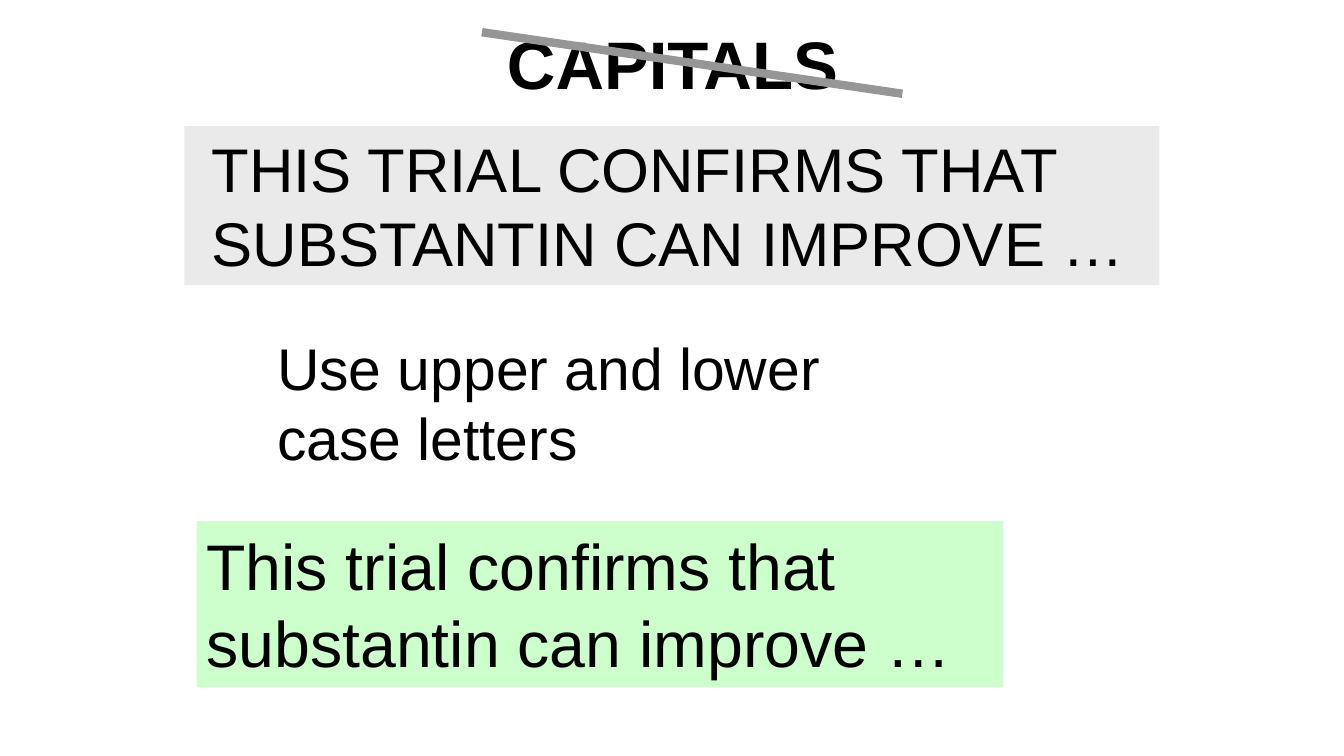
from lxml import etree
from pptx import Presentation
from pptx import util as u
from pptx.dml.color import RGBColor
from pptx.enum import shapes, text
from pptx.oxml.ns import qn

BLACK = RGBColor(0x00, 0x00, 0x00)
GREY = RGBColor(0xEA, 0xEA, 0xEA)
GREEN = RGBColor(0xCC, 0xFF, 0xCC)
STRIKE = RGBColor(0x96, 0x96, 0x96)

BLOCKS = [
    dict(lines=["THIS TRIAL CONFIRMS THAT", "SUBSTANTIN CAN IMPROVE …"],
         at=(1.83, 1.25, 9.67, 1.58), size=44, inset=0.27, fill=GREY),
    dict(lines=["Use upper and lower", "case letters"],
         at=(2.65, 3.24, 7.48, 1.51), size=42, inset=0.1, fill=None),
    dict(lines=["This trial confirms that", "substantin can improve …"],
         at=(1.95, 5.17, 8, 1.65), size=46, inset=0.1, fill=GREEN),
    dict(lines=["CAPITALS"],
         at=(4.93, 0.17, 6.48, 0.91), size=48, inset=0.1, fill=None, bold=True),
]
STRIKE_ENDS = (4.78, 0.32, 8.95, 0.93)


def set_all(obj, values):
    for name, value in values.items():
        setattr(obj, name, value)


def add_block(s, block):
    box = [u.Inches(v) for v in block["at"]]
    if block["fill"] is None:
        sp = s.shapes.add_textbox(*box)
    else:
        sp = s.shapes.add_shape(shapes.MSO_SHAPE.RECTANGLE, *box)
        sp.shadow.inherit = False
        sp.fill.solid()
        sp.fill.fore_color.rgb = block["fill"]
        sp.line.fill.background()
    tf = sp.text_frame
    set_all(tf, dict(word_wrap=True, auto_size=text.MSO_AUTO_SIZE.NONE,
                     vertical_anchor=text.MSO_ANCHOR.TOP,
                     margin_left=u.Inches(block["inset"]), margin_right=u.Inches(0.1),
                     margin_top=u.Inches(0.05), margin_bottom=u.Inches(0.05)))
    for i, line in enumerate(block["lines"]):
        p = tf.add_paragraph() if i else tf.paragraphs[0]
        p.alignment = text.PP_ALIGN.LEFT
        r = p.add_run()
        r.text = line
        set_all(r.font, dict(name="Arial", size=u.Pt(block["size"]),
                             bold=block.get("bold", False)))
        r.font.color.rgb = BLACK


def add_strike(s):
    ends = [u.Inches(v) for v in STRIKE_ENDS]
    line = s.shapes.add_connector(shapes.MSO_CONNECTOR.STRAIGHT, *ends)
    line.line.color.rgb = STRIKE
    line.line.width = u.Pt(6)
    etree.SubElement(line._element.spPr, qn("a:effectLst"))


def main():
    prs = Presentation()
    set_all(prs, dict(slide_width=u.Inches(13.33), slide_height=u.Inches(7.5)))
    s = prs.slides.add_slide(prs.slide_layouts[6])
    for block in BLOCKS:
        add_block(s, block)
    add_strike(s)
    prs.save("out.pptx")


if __name__ == "__main__":
    main()
